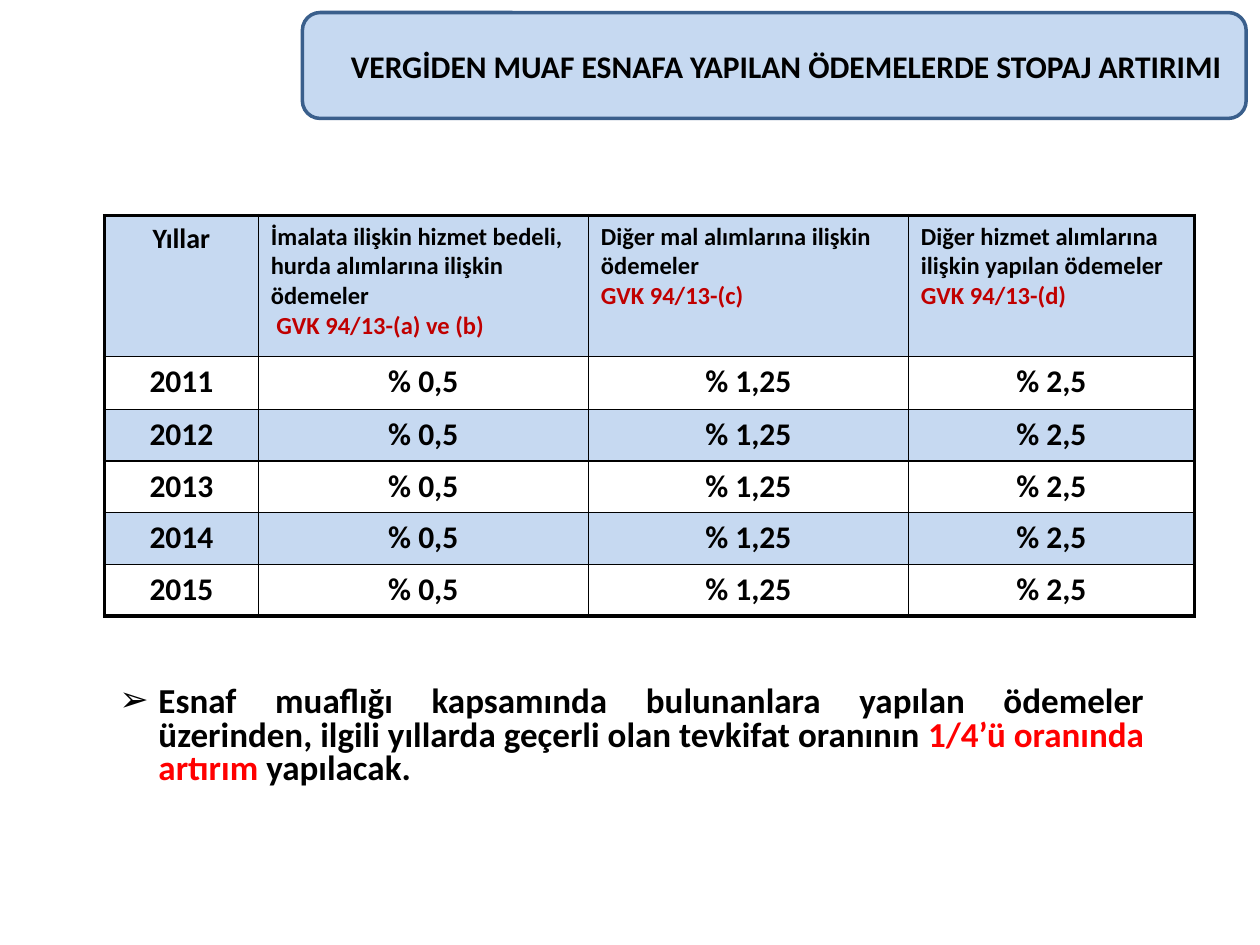
from lxml import etree
from pptx import Presentation
from pptx.dml.color import RGBColor
from pptx.enum import shapes, text
from pptx.oxml.ns import qn
from pptx.util import Inches, Pt

BLACK = RGBColor(0x00, 0x00, 0x00)
RED = RGBColor(0xFF, 0x00, 0x00)
DARK_RED = RGBColor(0xC0, 0x00, 0x00)
PALE_BLUE = RGBColor(0xC6, 0xD9, 0xF1)
STEEL_BLUE = RGBColor(0x3A, 0x5F, 0x8C)

FONT = "Calibri"
LEFT, CENTER, JUSTIFY = (
    text.PP_ALIGN.LEFT, text.PP_ALIGN.CENTER, text.PP_ALIGN.JUSTIFY)
THIN, THICK = 0.96, 2.21

COLUMNS = [1.22, 2.62, 2.54, 2.27]
ROWS = [1.12, 0.42] + [0.41] * 4
YEARS = ["2011", "2012", "2013", "2014", "2015"]
RATES = ["% 0,5", "% 1,25", "% 2,5"]
HEADINGS = [
    ("İmalata ilişkin hizmet bedeli, hurda alımlarına ilişkin ödemeler",
     " GVK 94/13-(a) ve (b)"),
    ("Diğer mal alımlarına ilişkin ödemeler", "GVK 94/13-(c)"),
    ("Diğer hizmet alımlarına ilişkin yapılan ödemeler", "GVK 94/13-(d)"),
]


def add_run(p, words, size=18, color=BLACK):
    """Add a bold run to a paragraph."""
    r = p.add_run()
    r.text = words
    r.font.name = FONT
    r.font.size = Pt(size)
    r.font.bold = True
    r.font.color.rgb = color


def write_line(p, words, align=CENTER, **style):
    """Fill a paragraph with one aligned run."""
    p.alignment = align
    add_run(p, words, **style)


def add_bullet(p, char, margin, indent):
    """Give a paragraph a black bullet with a hanging indent."""
    pPr = p._p.get_or_add_pPr()
    pPr.set("marL", str(Inches(margin)))
    pPr.set("indent", str(Inches(indent)))
    color = etree.SubElement(pPr, qn("a:buClr"))
    etree.SubElement(color, qn("a:srgbClr"), val=str(BLACK))
    etree.SubElement(pPr, qn("a:buFont"), typeface=FONT)
    etree.SubElement(pPr, qn("a:buChar"), char=char)


def add_text_box(s, left, top, width, height):
    """Add a wrapping text box and return its text frame."""
    tf = s.shapes.add_textbox(
        Inches(left), Inches(top), Inches(width), Inches(height)).text_frame
    tf.word_wrap = True
    return tf


def add_title(s, words):
    """Add the rounded banner and its title."""
    sp = s.shapes.add_shape(
        shapes.MSO_SHAPE.ROUNDED_RECTANGLE,
        Inches(2.4), Inches(0.1), Inches(7.49), Inches(0.84))
    sp.shadow.inherit = False
    sp.fill.solid()
    sp.fill.fore_color.rgb = PALE_BLUE
    sp.line.color.rgb = STEEL_BLUE
    sp.line.width = Pt(2)
    tf = add_text_box(s, 2.48, 0.21, 7.52, 0.63)
    tf.vertical_anchor = text.MSO_ANCHOR.MIDDLE
    write_line(tf.paragraphs[0], words)


def add_note(s, parts):
    """Add the bulleted note from (words, colour) parts."""
    p = add_text_box(s, 0.75, 5.4, 8.43, 0.87).paragraphs[0]
    p.alignment = JUSTIFY
    p.line_spacing = 0.8
    add_bullet(p, "➢", 0.41, -0.31)
    for words, color in parts:
        add_run(p, words, size=20, color=color)


def set_borders(cell, widths):
    """Draw black cell borders from a side-to-points mapping."""
    tcPr = cell._tc.get_or_add_tcPr()
    for side, width in widths.items():
        ln = etree.SubElement(tcPr, qn(f"a:ln{side}"), w=str(Pt(width)))
        fill = etree.SubElement(ln, qn("a:solidFill"))
        etree.SubElement(fill, qn("a:srgbClr"), val=str(BLACK))


def format_cell(cell, row, col):
    """Frame the table thickly and shade every second row."""
    set_borders(cell, {
        "L": THICK if col == 0 else THIN,
        "R": THICK if col == len(COLUMNS) - 1 else THIN,
        "T": THICK if row == 0 else THIN,
        "B": THICK if row == len(ROWS) - 1 else THIN,
    })
    if row % 2 == 0:
        cell.fill.solid()
        cell.fill.fore_color.rgb = PALE_BLUE
    else:
        cell.fill.background()


def add_rate_table(s):
    """Add the table of withholding rates by year."""
    table = s.shapes.add_table(
        len(ROWS), len(COLUMNS), Inches(0.83), Inches(1.71),
        Inches(sum(COLUMNS)), Inches(sum(ROWS))).table
    for column, width in zip(table.columns, COLUMNS):
        column.width = Inches(width)
    for row, height in zip(table.rows, ROWS):
        row.height = Inches(height)
    for i in range(len(ROWS)):
        for j in range(len(COLUMNS)):
            format_cell(table.cell(i, j), i, j)

    write_line(table.cell(0, 0).text_frame.paragraphs[0], "Yıllar", size=16)
    for j, (heading, article) in enumerate(HEADINGS, 1):
        tf = table.cell(0, j).text_frame
        write_line(tf.paragraphs[0], heading, LEFT, size=14)
        write_line(tf.add_paragraph(), article, LEFT, size=14, color=DARK_RED)
    for i, year in enumerate(YEARS, 1):
        for j, words in enumerate([year, *RATES]):
            write_line(table.cell(i, j).text_frame.paragraphs[0], words)


def main():
    """Build the slide and save it."""
    prs = Presentation()
    prs.slide_width, prs.slide_height = Inches(10), Inches(7.5)
    s = prs.slides.add_slide(prs.slide_layouts[6])
    add_title(s, "VERGİDEN MUAF ESNAFA YAPILAN ÖDEMELERDE STOPAJ ARTIRIMI")
    add_note(s, [
        ("Esnaf muaflığı kapsamında bulunanlara yapılan ödemeler üzerinden, "
         "ilgili yıllarda geçerli olan tevkifat oranının ", BLACK),
        ("1/4’ü oranında artırım", RED),
        (" yapılacak.", BLACK),
    ])
    add_rate_table(s)
    prs.save("out.pptx")


if __name__ == "__main__":
    main()
